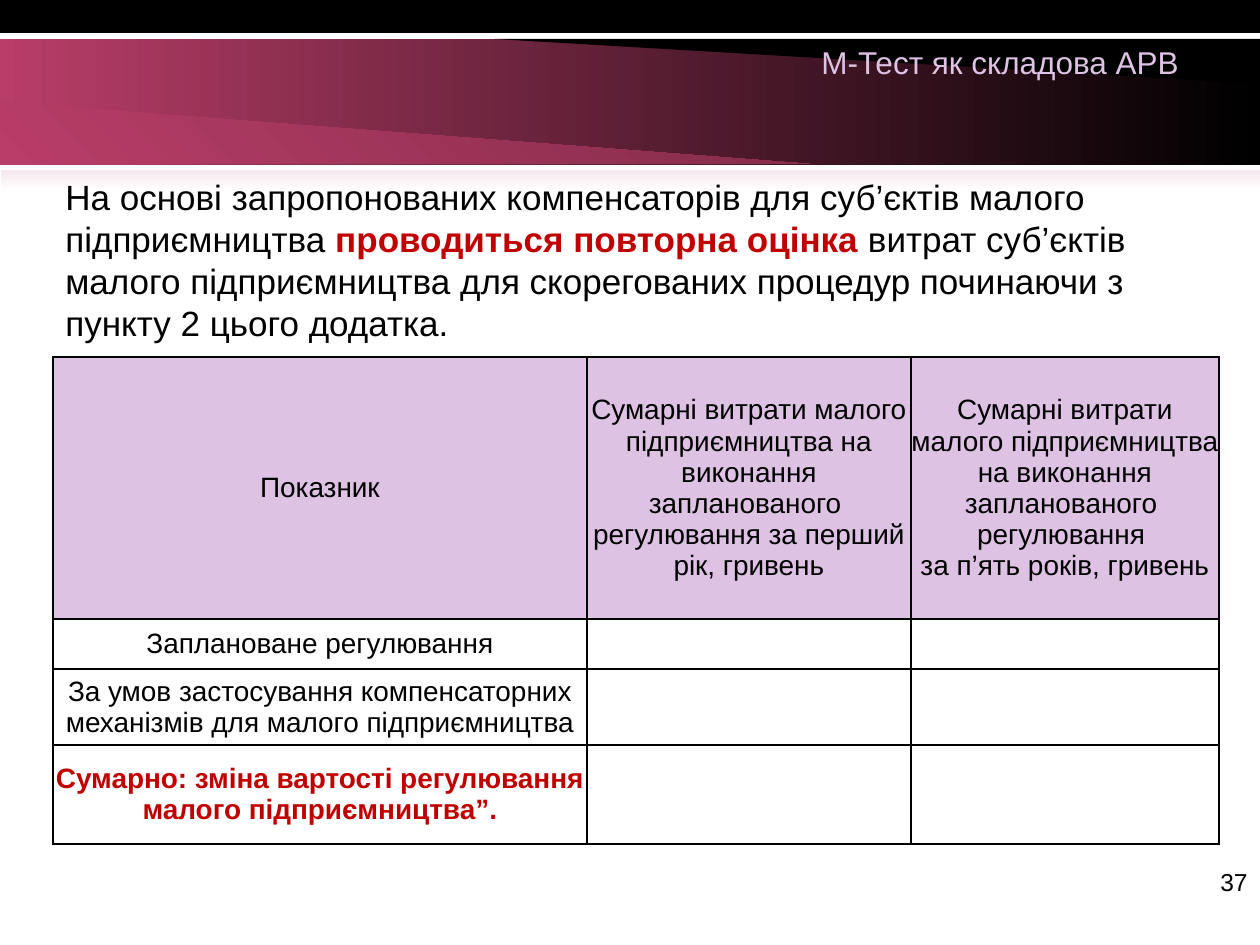
from dataclasses import dataclass

from lxml.etree import SubElement
from pptx import Presentation
from pptx.dml.color import RGBColor
from pptx.enum.shapes import MSO_SHAPE
from pptx.enum.text import MSO_ANCHOR, MSO_AUTO_SIZE, PP_ALIGN
from pptx.oxml.ns import qn
from pptx.util import Emu, Pt

EMU_PER_PX = 914400 / 126


@dataclass(frozen=True)
class Theme:
    font: str = "Arial"
    black: str = "000000"
    white: str = "FFFFFF"
    red: str = "C00000"
    lilac: str = "DEC2E4"
    berry: str = "B83D68"
    wine: str = "842C4A"
    blush: str = "F4E7ED"
    body: int = 20
    title: int = 18
    cell: int = 16
    number: int = 14
    border: int = 1


THEME = Theme()

COLUMNS = [534, 324, 308]
ROWS = [262, 50, 76, 99]
HEADERS = [
    "Показник",
    "Сумарні витрати малого підприємництва на виконання запланованого  регулювання за перший рік, гривень",
    "Сумарні витрати малого підприємництва на виконання запланованого  регулювання \nза п’ять років, гривень",
]
INDICATORS = [
    "Заплановане регулювання",
    "За умов застосування компенсаторних механізмів для малого підприємництва",
    "Сумарно: зміна вартості регулювання малого підприємництва”.",
]


def px(value):
    return Emu(round(value * EMU_PER_PX))


def paint(sp, colors, angle=0):
    """Fill with one colour, or with a gradient between two (clockwise angle)."""
    sp.shadow.inherit = False
    sp.line.fill.background()
    if len(colors) == 1:
        sp.fill.solid()
        sp.fill.fore_color.rgb = RGBColor.from_string(colors[0])
        return
    sp.fill.gradient()
    sp.fill.gradient_angle = (360 - angle) % 360
    for stop, color in zip(sp.fill.gradient_stops, colors):
        stop.color.rgb = RGBColor.from_string(color)


def add_band(slide, box, colors, angle=0):
    sp = slide.shapes.add_shape(MSO_SHAPE.RECTANGLE, *map(px, box))
    paint(sp, colors, angle)


def add_wedge(slide, points, colors, angle=0):
    builder = slide.shapes.build_freeform(*points[0], scale=EMU_PER_PX)
    builder.add_line_segments(points[1:], close=True)
    paint(builder.convert_to_shape(), colors, angle)


def style_run(r, size, color=THEME.black, bold=False):
    formats = {"name": THEME.font, "size": Pt(size), "bold": bold}
    for name, value in formats.items():
        setattr(r.font, name, value)
    r.font.color.rgb = RGBColor.from_string(color)


def add_text(slide, box, runs, size, align=PP_ALIGN.LEFT, **frame):
    """Add a text box; runs are (text, colour, bold)."""
    tf = slide.shapes.add_textbox(*map(px, box)).text_frame
    for name, value in {"word_wrap": True, **frame}.items():
        setattr(tf, name, value)
    p = tf.paragraphs[0]
    p.alignment = align
    for text, color, bold in runs:
        r = p.add_run()
        r.text = text
        style_run(r, size, color, bold)


def add_borders(cell):
    tc_pr = cell._tc.get_or_add_tcPr()
    for side in ("lnL", "lnR", "lnT", "lnB"):
        ln = SubElement(tc_pr, qn(f"a:{side}"), w=str(Pt(THEME.border)))
        fill = SubElement(ln, qn("a:solidFill"))
        SubElement(fill, qn("a:srgbClr"), val=THEME.black)


def format_cell(cell, text, fill=None, color=THEME.black, bold=False):
    add_borders(cell)
    if fill:
        cell.fill.solid()
        cell.fill.fore_color.rgb = RGBColor.from_string(fill)
    else:
        cell.fill.background()
    cell.vertical_anchor = MSO_ANCHOR.MIDDLE
    for side in ("left", "right", "top", "bottom"):
        setattr(cell, f"margin_{side}", 0)
    p = cell.text_frame.paragraphs[0]
    p.alignment = PP_ALIGN.CENTER
    p.text = text
    for r in p.runs:
        style_run(r, THEME.cell, color, bold)


def add_cost_table(slide, left, top):
    table = slide.shapes.add_table(
        len(ROWS), len(COLUMNS), px(left), px(top), px(sum(COLUMNS)), px(sum(ROWS))
    ).table
    table.first_row = table.horz_banding = False
    for column, width in zip(table.columns, COLUMNS):
        column.width = px(width)
    for row, height in zip(table.rows, ROWS):
        row.height = px(height)
    for cell, text in zip(table.rows[0].cells, HEADERS):
        format_cell(cell, text, fill=THEME.lilac)
    for i, label in enumerate(INDICATORS, start=1):
        total = i == len(INDICATORS)
        color = THEME.red if total else THEME.black
        for cell, text in zip(table.rows[i].cells, (label, "", "")):
            format_cell(cell, text, color=color, bold=total)


def main():
    prs = Presentation()
    prs.slide_width, prs.slide_height = px(1260), px(945)
    slide = prs.slides.add_slide(prs.slide_layouts[6])

    # Header bands
    add_band(slide, (0, 39, 1261, 126), [THEME.berry, THEME.black])
    add_wedge(slide, [(1237, 39), (495, 39), (1261, 84), (1261, 39)], [THEME.black])
    add_wedge(slide, [(24, 164), (810, 164), (0, 102), (0, 164)],
              [THEME.berry, THEME.wine], 315)
    add_band(slide, (0, 0, 1260, 33), [THEME.black])
    add_band(slide, (1, 170, 1259, 21), [THEME.blush, THEME.white], 90)

    # Page number, statement and title
    add_text(slide, (966, 861, 294, 66), [("37", THEME.black, False)],
             THEME.number, PP_ALIGN.RIGHT)
    add_text(slide, (53, 168, 1124, 183), [
        ("На основі запропонованих компенсаторів для суб’єктів малого підприємництва ",
         THEME.black, False),
        ("проводиться повторна оцінка ", THEME.red, True),
        ("витрат суб’єктів малого підприємництва для скорегованих процедур "
         "починаючи з пункту 2 цього додатка.", THEME.black, False),
    ], THEME.body, vertical_anchor=MSO_ANCHOR.MIDDLE,
        auto_size=MSO_AUTO_SIZE.SHAPE_TO_FIT_TEXT)
    add_text(slide, (809, 37, 387, 50), [("М-Тест як складова АРВ", THEME.lilac, False)],
             THEME.title, word_wrap=False, auto_size=MSO_AUTO_SIZE.SHAPE_TO_FIT_TEXT)

    # Cost comparison
    add_cost_table(slide, 53, 357)

    prs.save("out.pptx")


if __name__ == "__main__":
    main()
